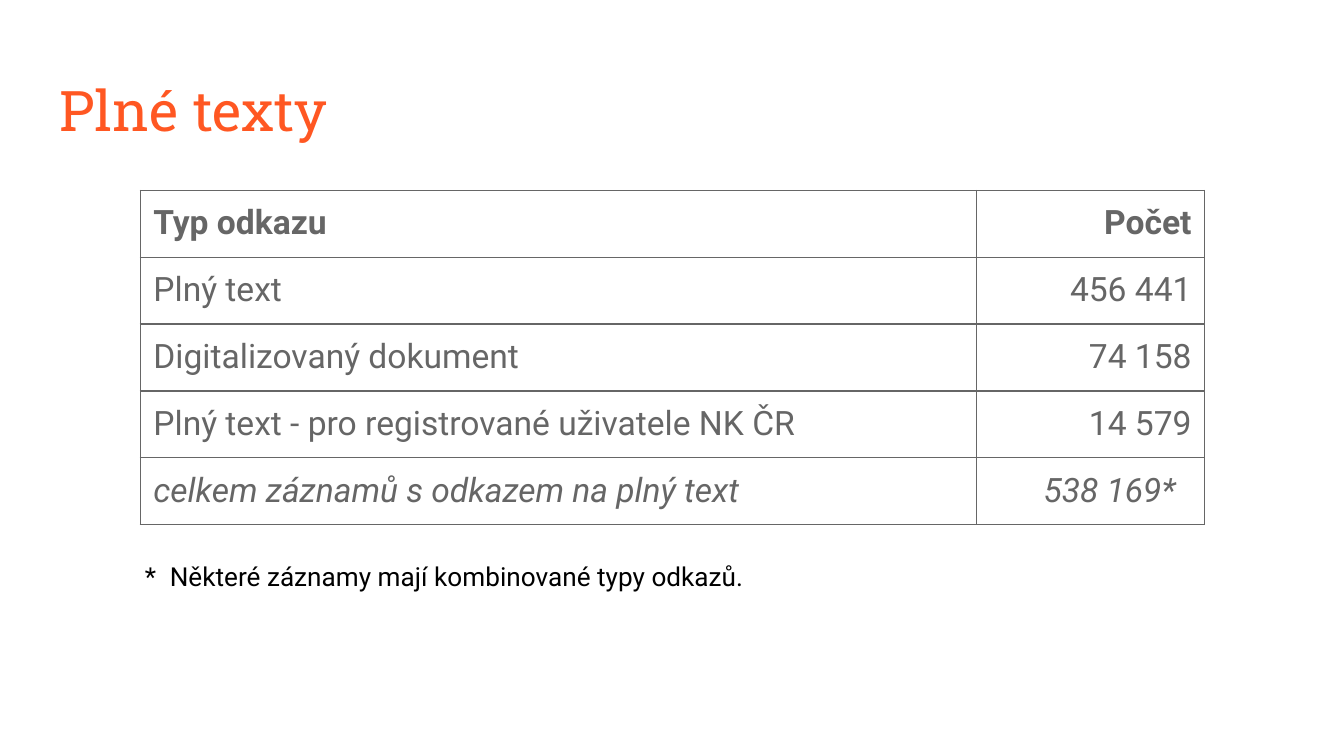
from lxml import etree
from pptx import Presentation
from pptx.dml.color import RGBColor
from pptx.enum.text import MSO_ANCHOR, PP_ALIGN
from pptx.oxml.ns import qn
from pptx.util import Cm, Pt

LEFT, RIGHT = PP_ALIGN.LEFT, PP_ALIGN.RIGHT
TOP = MSO_ANCHOR.TOP
ORANGE = RGBColor(0xFF, 0x57, 0x22)
GREY = RGBColor(0x66, 0x66, 0x66)
BLACK = RGBColor(0x00, 0x00, 0x00)
PAD = 0.25
SIDES = ("left", "top", "right", "bottom")

HEAD = {"name": "Roboto Slab", "size": Pt(30)}
BODY = {"name": "Roboto", "size": Pt(18)}
NOTE = {"name": "Roboto", "size": Pt(14)}

ROWS = [
    ("Typ odkazu", "Počet", {"bold": True}),
    ("Plný text", "456 441", {}),
    ("Digitalizovaný dokument", "74 158", {}),
    ("Plný text - pro registrované uživatele NK ČR", "14 579", {}),
    ("celkem záznamů s odkazem na plný text", "538 169*", {"italic": True}),
]


class Page:
    def __init__(self, slide, edge=GREY, line=Pt(0.75)):
        self.slide = slide
        self.edge = edge
        self.line = line

    def pad(self, area, **sizes):
        for side in SIDES:
            setattr(area, f"margin_{side}", Cm(sizes.get(side, PAD)))

    def label(self, frame, words, form, color, align=LEFT):
        para = frame.paragraphs[0]
        para.alignment = align
        run = para.add_run()
        run.text = words
        for key, value in form.items():
            setattr(run.font, key, value)
        run.font.color.rgb = color
        return para

    def text(self, box, words, form, color, **sizes):
        frame = self.slide.shapes.add_textbox(*map(Cm, box)).text_frame
        frame.word_wrap = True
        frame.vertical_anchor = TOP
        self.pad(frame, **sizes)
        return self.label(frame, words, form, color)

    def note(self, box, words, form, color, hang):
        """Add text whose mark hangs left of the wording."""
        props = self.text(box, words, form, color)._p.get_or_add_pPr()
        props.set("marL", str(Cm(hang)))
        props.set("indent", str(-Cm(hang)))

    def frame(self, cell):
        """Draw a thin line on all four sides of a cell."""
        props = cell._tc.get_or_add_tcPr()
        for spot, tag in enumerate(("a:lnL", "a:lnR", "a:lnT", "a:lnB")):
            line = etree.Element(qn(tag), w=str(self.line))
            fill = etree.SubElement(line, qn("a:solidFill"))
            etree.SubElement(fill, qn("a:srgbClr"), val=str(self.edge))
            props.insert(spot, line)

    def table(self, left, top, widths, high, rows):
        size = (left, top, sum(widths), high * len(rows))
        shape = self.slide.shapes.add_table(
            len(rows), len(widths), *map(Cm, size))
        grid = shape.table
        grid.first_row = grid.horz_banding = False
        for col, width in zip(grid.columns, widths):
            col.width = Cm(width)
        for row, (*words, extra) in zip(grid.rows, rows):
            row.height = Cm(high)
            for cell, word, align in zip(row.cells, words, (LEFT, RIGHT)):
                cell.fill.background()
                self.frame(cell)
                self.pad(cell, right=0.55 if word.endswith("*") else PAD)
                self.label(cell.text_frame, word, {**BODY, **extra},
                           GREY, align)


def main():
    deck = Presentation()
    deck.slide_width, deck.slide_height = Cm(25.4), Cm(14.29)
    page = Page(deck.slides.add_slide(deck.slide_layouts[6]))
    page.text((0.87, 1.24, 23.67, 1.6), "Plné texty", HEAD, ORANGE, top=0.18)
    page.table(2.65, 3.6, (15.8, 4.32), 1.25, ROWS)
    page.note((2.49, 10.34, 20.42, 1.04),
              "*\tNěkteré záznamy mají kombinované typy odkazů.",
              NOTE, BLACK, 0.47)
    deck.save("out.pptx")


if __name__ == "__main__":
    main()
